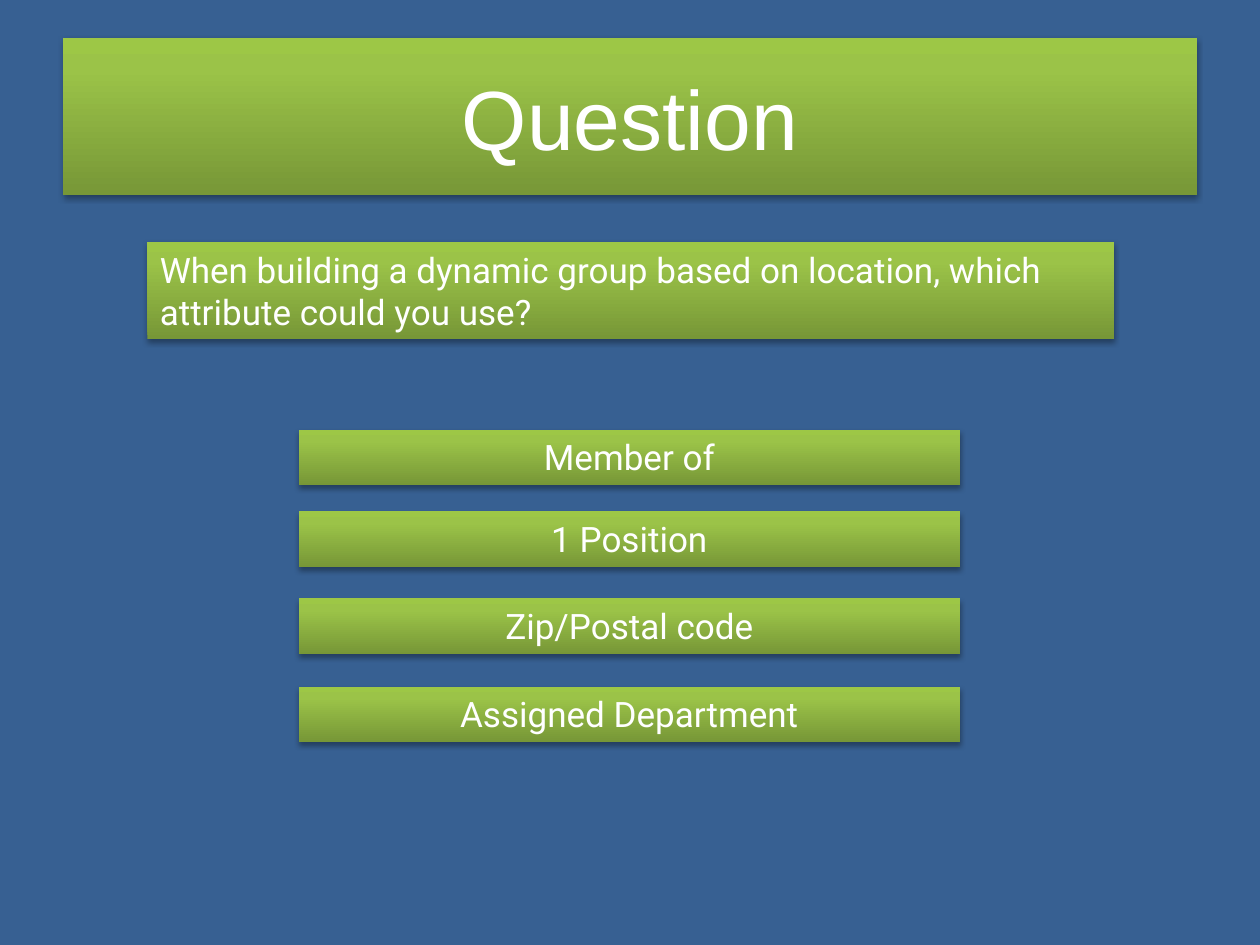
import pptx
import pptx.dml.color
import pptx.enum.shapes
import pptx.enum.text
import pptx.oxml
import pptx.oxml.ns
import pptx.util
from dataclasses import dataclass

Inches = pptx.util.Inches
Align = pptx.enum.text.PP_ALIGN
Anchor = pptx.enum.text.MSO_ANCHOR


@dataclass(frozen=True)
class Theme:
    back: str = "376092"
    ink: str = "FFFFFF"
    shade: str = "000000"
    stops: tuple = ((0, "779737"), (80, "9BC348"), (100, "9DC746"))
    head_font: str = "Arial"
    body_font: str = "Roboto"
    head_size: int = 48
    body_size: int = 20


def rgb(code):
    return pptx.dml.color.RGBColor.from_string(code)


def write(frame, text, font, size, color, align=Align.LEFT, anchor=Anchor.TOP):
    frame.word_wrap = True
    frame.vertical_anchor = anchor
    para = frame.paragraphs[0]
    para.alignment = align
    run = para.add_run()
    run.text = text
    run.font.name = font
    run.font.size = pptx.util.Pt(size)
    run.font.color.rgb = rgb(color)


class Deck:
    def __init__(self, theme):
        self.theme = theme
        self.file = pptx.Presentation()
        self.file.slide_width = Inches(10)
        self.file.slide_height = Inches(7.5)
        self.slide = self.file.slides.add_slide(self.file.slide_layouts[6])
        fill = self.slide.background.fill
        fill.solid()
        fill.fore_color.rgb = rgb(theme.back)

    def panel(self, left, top, width, height):
        """Add a box with an upward gradient and a soft shadow below."""
        box = self.slide.shapes.add_shape(
            pptx.enum.shapes.MSO_SHAPE.RECTANGLE,
            Inches(left), Inches(top), Inches(width), Inches(height))
        box.line.fill.background()
        box.shadow.inherit = False
        space = pptx.oxml.ns.nsdecls("a")
        stops = "".join(
            f'<a:gs pos="{pos * 1000}"><a:srgbClr val="{code}"/></a:gs>'
            for pos, code in self.theme.stops)
        props = box._element.spPr
        props.find(pptx.oxml.ns.qn("a:prstGeom")).addnext(pptx.oxml.parse_xml(
            f'<a:gradFill {space} rotWithShape="1"><a:gsLst>{stops}</a:gsLst>'
            '<a:lin ang="16200000" scaled="0"/></a:gradFill>'))
        props.find(pptx.oxml.ns.qn("a:effectLst")).append(pptx.oxml.parse_xml(
            f'<a:outerShdw {space} blurRad="40000" dist="23000" dir="5400000" '
            f'rotWithShape="0"><a:srgbClr val="{self.theme.shade}">'
            '<a:alpha val="35000"/></a:srgbClr></a:outerShdw>'))
        return box.text_frame

    def title(self, text, *place):
        look = self.theme
        write(self.panel(*place), text, look.head_font, look.head_size,
              look.ink, align=Align.CENTER, anchor=Anchor.MIDDLE)

    def label(self, text, *place, align=Align.CENTER):
        look = self.theme
        frame = self.panel(*place)
        write(frame, text, look.body_font, look.body_size, look.ink, align=align)
        frame.auto_size = pptx.enum.text.MSO_AUTO_SIZE.SHAPE_TO_FIT_TEXT


def main():
    deck = Deck(Theme())

    # Heading and question
    deck.title("Question", 0.5, 0.3, 9, 1.25)
    deck.label("When building a dynamic group based on location, which "
               "attribute could you use?", 1.17, 1.92, 7.67, 0.77,
               align=Align.LEFT)

    # Answers
    answers = {"Member of": 3.41, "1 Position": 4.06,
               "Zip/Postal code": 4.75, "Assigned Department": 5.45}
    for text, top in answers.items():
        deck.label(text, 2.37, top, 5.25, 0.44)

    deck.file.save("out.pptx")


if __name__ == "__main__":
    main()
